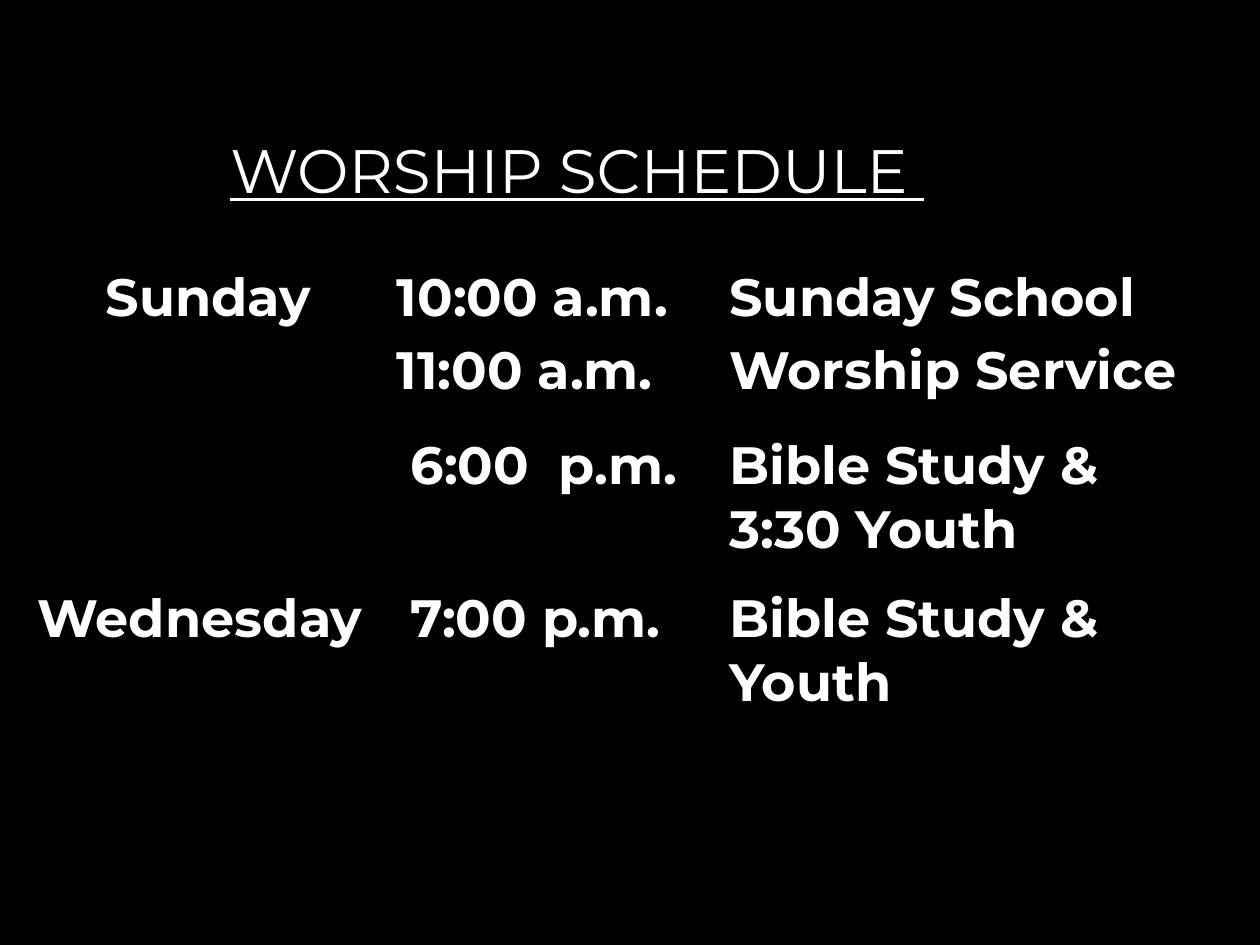
import pptx
import pptx.util
import pptx.dml.color
import pptx.enum.text
import pptx.oxml.ns

Inches = pptx.util.Inches
Pt = pptx.util.Pt
Align = pptx.enum.text.PP_ALIGN

COLORS = {"back": "000000", "text": "FFFFFF"}
FONT = "Montserrat"
NO_GRID = "{2D5ABB26-0587-4C30-8999-92F81FD0307C}"
COLS = [2.85, 2.64, 4.14]
ROWS = [0.58, 0.75, 1.22, 1.39]
TIMES = [
    ("Sunday", "10:00 a.m.", "Sunday School"),
    ("", "11:00 a.m.", "Worship Service"),
    ("", "6:00  p.m.", "Bible Study &\n3:30 Youth"),
    ("Wednesday", "7:00 p.m.", "Bible Study & Youth"),
]


def color(name):
    return pptx.dml.color.RGBColor.from_string(COLORS[name])


def style(para, size, bold):
    font = para.font
    font.name, font.size, font.bold = FONT, Pt(size), bold
    font.color.rgb = color("text")


def indent(para, left):
    props = para._p.get_or_add_pPr()
    props.set("marL", str(Inches(left)))
    props.set("indent", "0")


def add_title(slide, left, top, width, height):
    box = slide.shapes.add_textbox(
        Inches(left), Inches(top), Inches(width), Inches(height))
    box.text_frame.word_wrap = True
    para = box.text_frame.paragraphs[0]
    # The underline runs on below the closing space
    para.text = "WORSHIP SCHEDULE "
    style(para, 35, False)
    para.font.underline = True
    indent(para, 1.03)


def add_times(slide, left, top):
    frame = slide.shapes.add_table(
        len(ROWS), len(COLS), Inches(left), Inches(top),
        Inches(sum(COLS)), Inches(sum(ROWS)))
    table = frame.table

    # Plain table: no bands, no grid
    table.first_row = table.horz_banding = False
    tag = pptx.oxml.ns.qn("a:tableStyleId")
    next(table._tbl.iter(tag)).text = NO_GRID

    for col, width in zip(table.columns, COLS):
        col.width = Inches(width)
    for row, height, texts in zip(table.rows, ROWS, TIMES):
        row.height = Inches(height)
        for cell, text in zip(row.cells, texts):
            cell.fill.background()
            cell.margin_left = cell.margin_right = Inches(0.07)
            cell.margin_top = cell.margin_bottom = Inches(0.04)
            cell.text = text
            for para in cell.text_frame.paragraphs:
                style(para, 30, True)

    # Day centred, evening hours set in a little
    table.cell(0, 0).text_frame.paragraphs[0].alignment = Align.CENTER
    for row in (2, 3):
        indent(table.cell(row, 1).text_frame.paragraphs[0], 0.11)


def main():
    deck = pptx.Presentation()
    deck.slide_width, deck.slide_height = Inches(10), Inches(7.5)
    slide = deck.slides.add_slide(deck.slide_layouts[6])
    fill = slide.background.fill
    fill.solid()
    fill.fore_color.rgb = color("back")
    add_title(slide, 0.7, 1, 9.06, 0.69)
    add_times(slide, 0.23, 2.07)
    deck.save("out.pptx")


if __name__ == "__main__":
    main()
